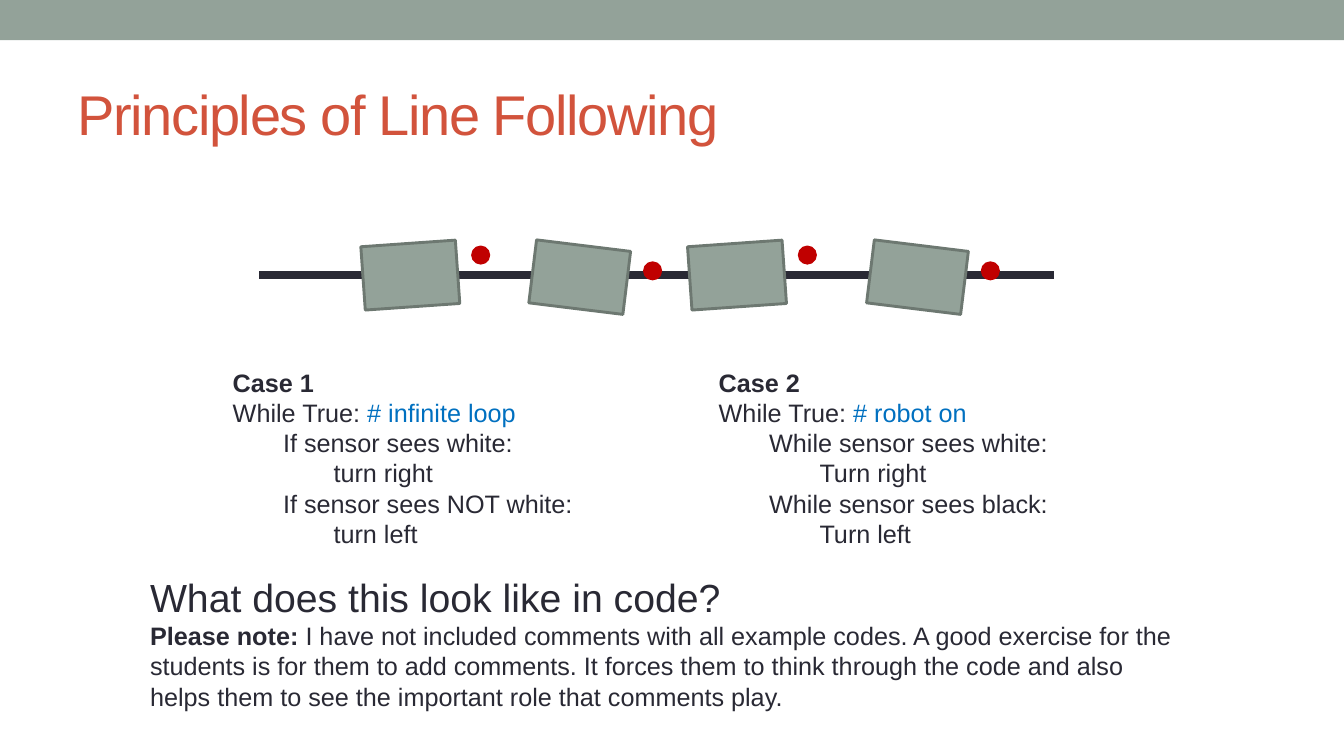
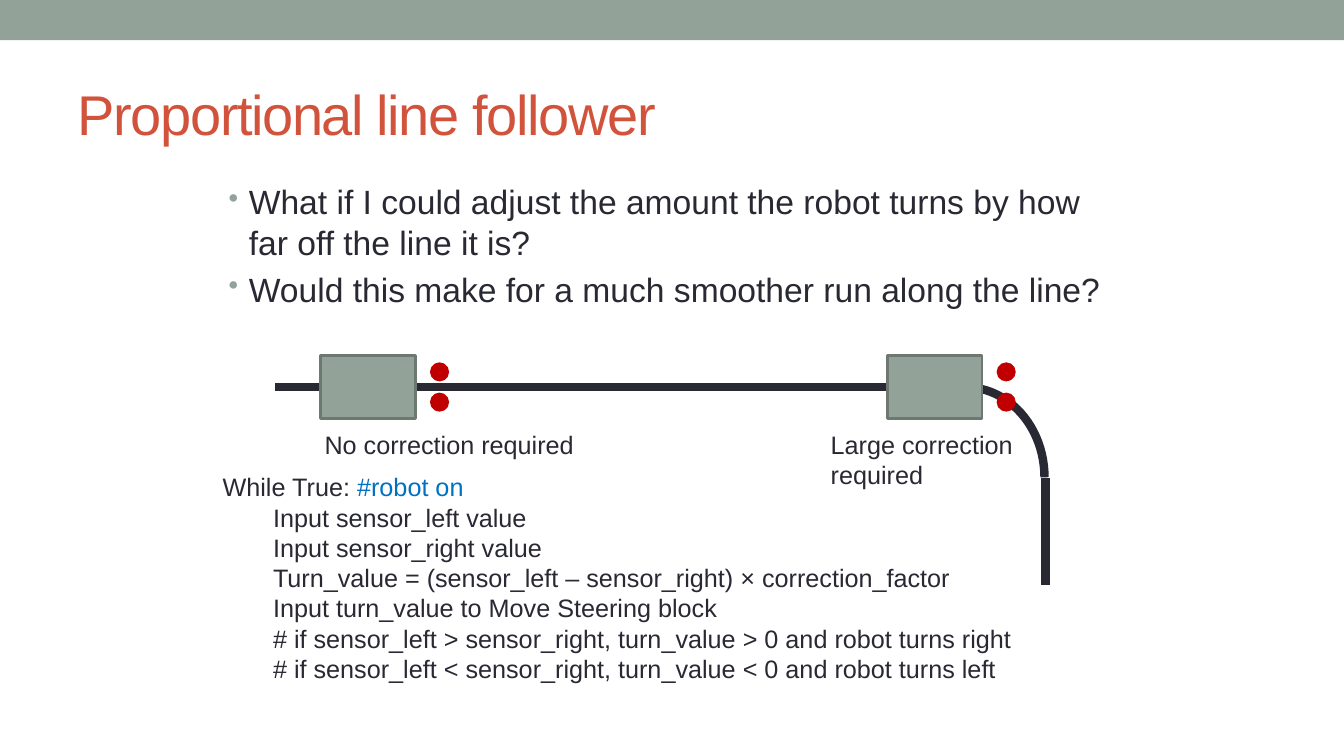
from math import cos, radians, sin

from lxml.etree import SubElement
from pptx import Presentation
from pptx.dml.color import RGBColor
from pptx.enum.shapes import MSO_CONNECTOR, MSO_SHAPE
from pptx.enum.text import MSO_ANCHOR, PP_ALIGN
from pptx.oxml.ns import qn
from pptx.util import Inches, Pt

FONT = "Arial"
INK, SAGE, EDGE = "292934", "93A299", "6D7871"
RUST, RED, BLUE = "D2533C", "C00000", "0070C0"
WIDE, HIGH = 13.33, 7.5


def color(code):
    return RGBColor.from_string(code)


def box(*nums):
    return [Inches(n) for n in nums]


# Shapes and lines
def shape(shapes, kind, at, fill, line, width=2.08, turn=0):
    item = shapes.add_shape(kind, *box(*at))
    item.shadow.inherit = False
    item.rotation = turn
    if fill:
        item.fill.solid()
        item.fill.fore_color.rgb = color(fill)
    else:
        item.fill.background()
    if line:
        item.line.color.rgb = color(line)
        item.line.width = Pt(width)
    else:
        item.line.fill.background()
    return item


def track(slide, x1, y1, x2, y2):
    line = slide.shapes.add_connector(MSO_CONNECTOR.STRAIGHT, *box(x1, y1, x2, y2))
    line.line.color.rgb = color(INK)
    line.line.width = Pt(6)
    SubElement(line.element.spPr, qn("a:effectLst"))


def robot(slide, x, y, eyes, turn=0):
    """Body centred on x, y; eyes are sensor heights ahead of it."""
    group = slide.shapes.add_group_shape().shapes
    wide, high, dot, reach = 0.94, 0.63, 0.16, 0.71
    shape(group, MSO_SHAPE.RECTANGLE, (x - wide / 2, y - high / 2, wide, high),
          SAGE, EDGE, turn=turn)
    angle = radians(turn)
    for eye in eyes:
        left = x + reach * cos(angle) - eye * sin(angle) - dot / 2
        top = y + reach * sin(angle) + eye * cos(angle) - dot / 2
        shape(group, MSO_SHAPE.OVAL, (left, top, dot, dot), RED, RED)


# Text: each row is a level and its runs; a run is text, or text with changes
def style(run, size=18, tint=INK, bold=False):
    font = run.font
    font.name, font.size, font.bold = FONT, Pt(size), bold
    font.color.rgb = color(tint)


def text(slide, at, rows, size=18):
    frame = slide.shapes.add_textbox(*box(*at)).text_frame
    frame.word_wrap = True
    for i, (level, *runs) in enumerate(rows):
        para = frame.paragraphs[0] if i == 0 else frame.add_paragraph()
        para.level = level
        if level:
            para._p.get_or_add_pPr().set("marL", str(Inches(level / 2)))
        for part in runs:
            words, look = (part, {}) if isinstance(part, str) else part
            run = para.add_run()
            run.text = words
            style(run, **{"size": size, **look})
    return frame


def bullets(slide, at, lines):
    frame = text(slide, at, [(0, line) for line in lines], 24)
    for para in frame.paragraphs:
        para.space_before = Pt(4.8)
        props = para._p.get_or_add_pPr()
        props.set("marL", str(Inches(0.2)))
        props.set("indent", str(-Inches(0.2)))
        tint = SubElement(props, qn("a:buClr"))
        SubElement(tint, qn("a:srgbClr")).set("val", SAGE)
        SubElement(props, qn("a:buSzPct")).set("val", "85000")
        SubElement(props, qn("a:buChar")).set("char", "•")


# Shared slide parts
def page(deck, title):
    slide = deck.slides.add_slide(deck.slide_layouts[5])
    shape(slide.shapes, MSO_SHAPE.RECTANGLE, (0, 0, WIDE, 0.4), SAGE, None)
    head = slide.shapes.title
    head.left, head.top, head.width, head.height = box(0.67, 0.58, 12, 1.08)
    frame = head.text_frame
    frame.text = title
    frame.vertical_anchor = MSO_ANCHOR.MIDDLE
    para = frame.paragraphs[0]
    para.alignment = PP_ALIGN.LEFT
    run = para.runs[0]
    style(run, 40, RUST)
    run._r.get_or_add_rPr().set("spc", "-100")
    return slide


def case(slide, at, name, note, *steps):
    rows = [(0, (name, {"bold": True})),
            (0, "While True: ", (note, {"tint": BLUE}))]
    rows += [(1 + i % 2, step) for i, step in enumerate(steps)]
    text(slide, at, rows)


def basics(deck):
    slide = page(deck, "Principles of Line Following")
    # Robots swing from side to side along the line
    track(slide, 2.57, 2.73, 10.45, 2.73)
    for i, x in enumerate((4.07, 5.75, 7.31, 9.1)):
        robot(slide, x, (2.73, 2.75)[i % 2], [-0.15], (-4, 7)[i % 2])
    # Two ways to write the loop
    case(slide, (2.21, 3.59, 4.35, 1.92), "Case 1", "# infinite loop",
         "If sensor sees white:", "turn right",
         "If sensor sees NOT white:", "turn left")
    case(slide, (7.03, 3.59, 3.88, 1.92), "Case 2", "# robot on",
         "While sensor sees white:", "Turn right",
         "While sensor sees black:", "Turn left")
    # Closing question
    text(slide, (1.39, 5.64, 10.47, 1.48), [
        (0, ("What does this look like in code?", {"size": 28})),
        (0, ("Please note: ", {"bold": True}),
         "I have not included comments with all example codes. A good exercise "
         "for the students is for them to add comments. It forces them to think "
         "through the code and also helps them to see the important role that "
         "comments play."),
    ])


def steer(deck):
    slide = page(deck, "Proportional line follower")
    bullets(slide, (2.17, 1.75, 9, 1.69), [
        "What if I could adjust the amount the robot turns by how far off the "
        "line it is?",
        "Would this make for a much smoother run along the line?",
    ])
    # Straight, bend and drop of the line, with both robots
    track(slide, 2.73, 3.84, 9.58, 3.84)
    shape(slide.shapes, MSO_SHAPE.ARC, (8.79, 3.84, 1.57, 1.79), None, INK, 6)
    track(slide, 10.37, 4.74, 10.37, 5.8)
    for x in (3.65, 9.27):
        robot(slide, x, 3.84, [-0.15, 0.15])
    # Captions
    text(slide, (3.12, 4.21, 2.99, 0.4), [(0, "No correction required")])
    text(slide, (8.14, 4.21, 2.15, 0.71), [(0, "Large correction required")])
    # Program outline
    steps = [
        "Input sensor_left value",
        "Input sensor_right value",
        "Turn_value = (sensor_left – sensor_right) × correction_factor",
        "Input turn_value to Move Steering block",
        "# if sensor_left > sensor_right, turn_value > 0 and robot turns right",
        "# if sensor_left < sensor_right, turn_value < 0 and robot turns left",
    ]
    text(slide, (2.11, 4.63, 8.33, 2.22),
         [(0, "While True: ", ("#robot on", {"tint": BLUE}))]
         + [(1, step) for step in steps])


def main():
    deck = Presentation()
    deck.slide_width, deck.slide_height = box(WIDE, HIGH)
    basics(deck)
    steer(deck)
    deck.save("out.pptx")


if __name__ == "__main__":
    main()
